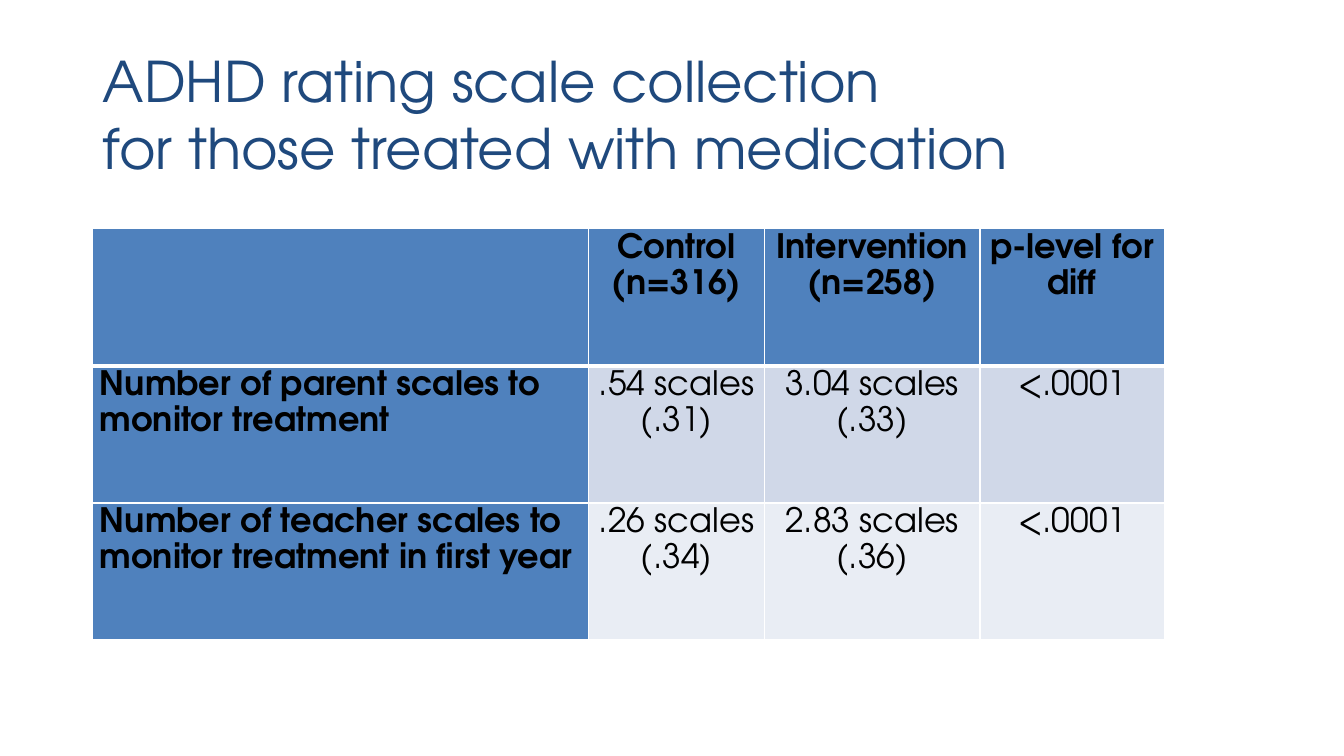
from lxml import etree
from pptx import Presentation
from pptx.dml.color import RGBColor
from pptx.enum import text
from pptx.oxml.ns import qn
from pptx.util import Inches, Pt

FONT = "TeX Gyre Adventor"
NAVY = RGBColor(0x1F, 0x49, 0x7D)
BLUE = RGBColor(0x4F, 0x81, 0xBD)
BAND_DARK = RGBColor(0xD0, 0xD8, 0xE8)
BAND_LIGHT = RGBColor(0xE9, 0xED, 0xF4)
BLACK = RGBColor(0, 0, 0)
WHITE = RGBColor(0xFF, 0xFF, 0xFF)

MARGIN = 0.92
COLUMN_WIDTHS = [4.92, 1.74, 2.14, 1.83]
ROW_HEIGHT = 1.36

TITLE = "ADHD rating scale collection\vfor those treated with medication"
RESULTS = [
    ["", "Control\n(n=316)", "Intervention\n(n=258)", "p-level for diff"],
    ["Number of parent scales to monitor treatment",
     ".54 scales\n(.31)", "3.04 scales\n(.33)", "<.0001"],
    ["Number of teacher scales to monitor treatment in first year",
     ".26 scales\n(.34)", "2.83 scales\n(.36)", "<.0001"],
]


def write(frame, content, size, color=BLACK, bold=False,
          align=text.PP_ALIGN.LEFT, spacing=None):
    frame.text = content
    for paragraph in frame.paragraphs:
        paragraph.alignment = align
        paragraph.line_spacing = spacing
        font = paragraph.font
        font.name, font.size, font.bold = FONT, Pt(size), bold
        font.color.rgb = color


def set_borders(cell, bottom):
    """Draw white cell edges, 1 pt except for the bottom one."""
    properties = cell._tc.get_or_add_tcPr()
    for position, (side, width) in enumerate(
            [("L", 1), ("R", 1), ("T", 1), ("B", bottom)]):
        edge = etree.Element(qn(f"a:ln{side}"), w=str(Pt(width)))
        fill = etree.SubElement(edge, qn("a:solidFill"))
        etree.SubElement(fill, qn("a:srgbClr"), val=str(WHITE))
        properties.insert(position, edge)


def add_title(slide):
    title = slide.shapes.title
    title.left, title.top = Inches(MARGIN), Inches(0.4)
    title.width, title.height = Inches(11.5), Inches(1.45)
    title.text_frame.vertical_anchor = text.MSO_ANCHOR.MIDDLE
    write(title.text_frame, TITLE, 40, color=NAVY)


def add_results(slide):
    table = slide.shapes.add_table(
        len(RESULTS), len(COLUMN_WIDTHS), Inches(MARGIN), Inches(2.27),
        Inches(sum(COLUMN_WIDTHS)), Inches(ROW_HEIGHT * len(RESULTS))).table
    table.first_col = True
    for column, width in zip(table.columns, COLUMN_WIDTHS):
        column.width = Inches(width)
    for r, (row, band) in enumerate(zip(RESULTS, [BLUE, BAND_DARK, BAND_LIGHT])):
        table.rows[r].height = Inches(ROW_HEIGHT)
        for c, content in enumerate(row):
            cell = table.cell(r, c)
            cell.margin_left = cell.margin_right = Inches(0.07)
            cell.margin_top = cell.margin_bottom = 0
            cell.fill.solid()
            cell.fill.fore_color.rgb = band if c else BLUE
            set_borders(cell, bottom=1 if r else 3)
            write(cell.text_frame, content, 24, bold=r == 0 or c == 0,
                  align=text.PP_ALIGN.CENTER if c else text.PP_ALIGN.LEFT,
                  spacing=1.15)


def main():
    deck = Presentation()
    deck.slide_width, deck.slide_height = Inches(13.33), Inches(7.5)
    slide = deck.slides.add_slide(deck.slide_layouts[5])
    add_title(slide)
    add_results(slide)
    deck.save("out.pptx")


if __name__ == "__main__":
    main()
